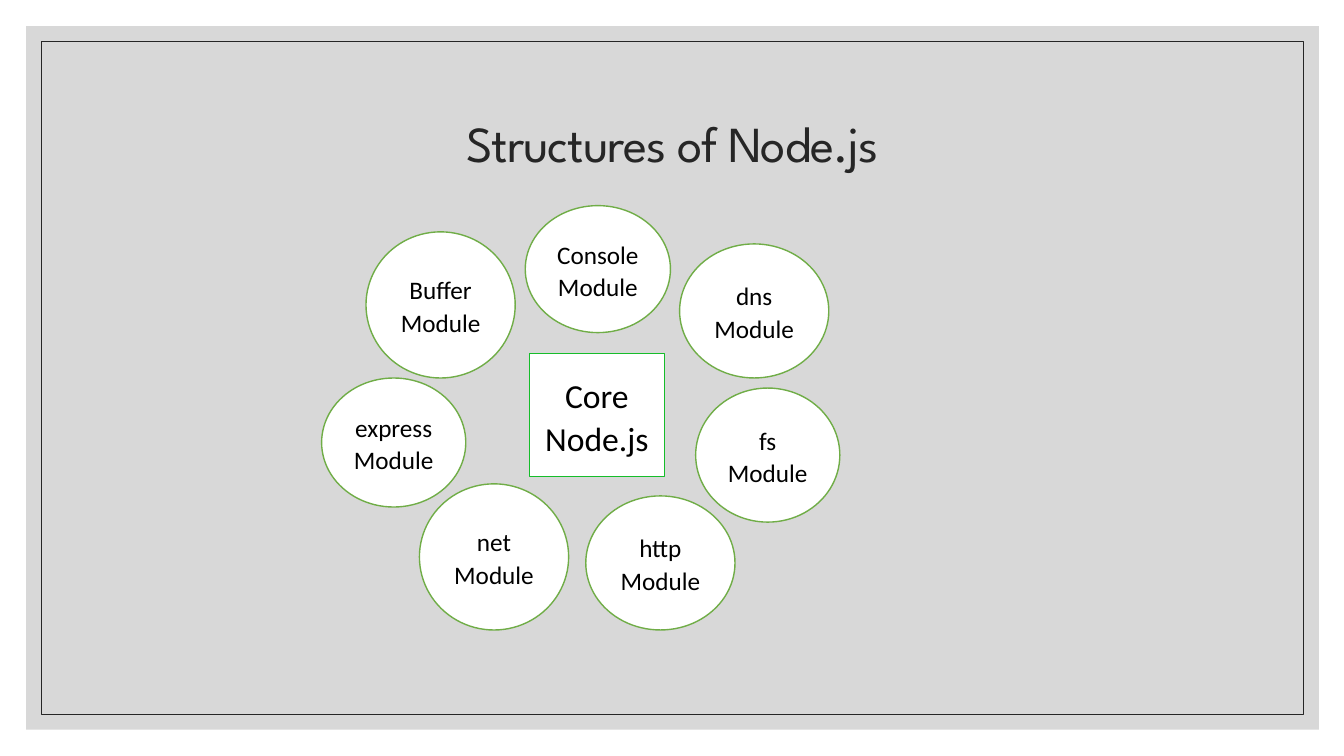
from lxml import etree
from pptx import Presentation
from pptx.dml.color import RGBColor
from pptx.enum.shapes import MSO_SHAPE
from pptx.enum.text import MSO_ANCHOR, PP_ALIGN
from pptx.oxml.ns import qn
from pptx.util import Emu, Pt

RECT, OVAL = MSO_SHAPE.RECTANGLE, MSO_SHAPE.OVAL
MIDDLE, CENTER = MSO_ANCHOR.MIDDLE, PP_ALIGN.CENTER

PX = 9144  # 100 px to the inch
COLORS = {
    "panel": "BFBFBF",
    "ink": "262626",
    "white": "FFFFFF",
    "black": "000000",
    "core": "15BD2A",
    "module": "70AD47",
}

# Name, left, top, width, height
MODULES = [
    ("Buffer", 363, 230, 148, 145),
    ("Console", 521, 204, 144, 126),
    ("dns", 674, 242, 148, 133),
    ("fs", 690, 385, 143, 133),
    ("http", 581, 492, 148, 133),
    ("net", 416, 480, 148, 145),
    ("express", 319, 375, 143, 128),
]


def px(*lengths):
    return [Emu(n * PX) for n in lengths]


def rgb(name):
    return RGBColor.from_string(COLORS[name])


def add_box(s, kind, box, fill=None, line=None, weight=1):
    sp = s.shapes.add_shape(kind, *px(*box))
    sp.shadow.inherit = False
    if fill:
        sp.fill.solid()
        sp.fill.fore_color.rgb = rgb(fill)
    else:
        sp.fill.background()
    if line:
        sp.line.color.rgb = rgb(line)
        sp.line.width = Pt(weight)
    else:
        sp.line.fill.background()
    return sp


def set_opacity(sp, percent):
    color = sp._element.spPr.find(qn("a:solidFill"))[0]
    etree.SubElement(color, qn("a:alpha"), val=str(percent * 1000))


def set_text(sp, text, font, size, color, spacing):
    tf = sp.text_frame
    tf.text = text
    tf.word_wrap = True
    tf.vertical_anchor = MIDDLE
    p = tf.paragraphs[0]
    p.alignment = CENTER
    p.line_spacing = spacing
    r = p.runs[0]
    r.font.name = font
    r.font.size = Pt(size)
    r.font.color.rgb = rgb(color)
    return p


def add_title(s, text, box):
    sp = s.shapes.add_textbox(*px(*box))
    p = set_text(sp, text, "League Spartan", 36, "ink", 0.9)
    p.runs[0].font._element.set("spc", "-70")


def add_node(s, kind, text, box, line, size):
    sp = add_box(s, kind, box, "white", line)
    p = set_text(sp, text, "Calibri", size, "black", 1.07)
    p.space_after = Pt(8)


def main():
    prs = Presentation()
    prs.slide_width, prs.slide_height = px(1333, 750)
    s = prs.slides.add_slide(prs.slide_layouts[6])

    # Background panel and frame
    panel = add_box(s, RECT, (26, 26, 1282, 698), "panel")
    set_opacity(panel, 60)
    add_box(s, RECT, (41, 41, 1252, 668), line="ink", weight=0.5)

    # Title
    add_title(s, "Structures of Node.js", (117, 70, 1100, 150))

    # Core with its ring of modules
    add_node(s, RECT, "Core Node.js", (525, 351, 134, 122), "core", 24)
    for name, *box in MODULES:
        add_node(s, OVAL, f"{name} Module", box, "module", 18)

    prs.save("out.pptx")


if __name__ == "__main__":
    main()
